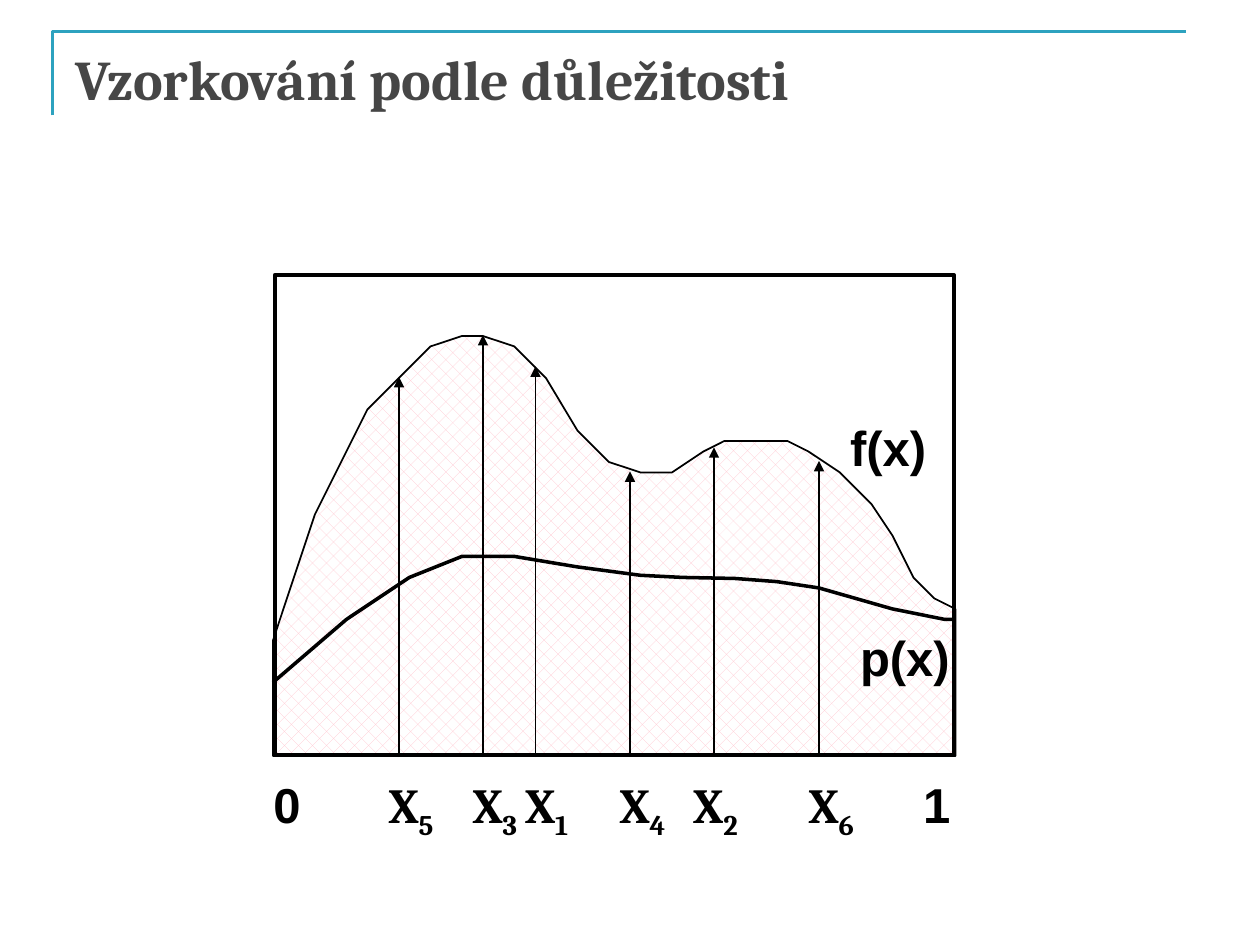
from dataclasses import dataclass
from typing import Sequence

from lxml.etree import SubElement
from pptx import Presentation
from pptx.dml.color import RGBColor as Rgb
from pptx.enum.dml import MSO_PATTERN_TYPE as Pattern
from pptx.enum.shapes import MSO_CONNECTOR as ConnectorKind, MSO_SHAPE as ShapeKind
from pptx.enum.text import MSO_ANCHOR as Anchor, MSO_AUTO_SIZE as AutoSize
from pptx.oxml.ns import qn
from pptx.shapes.autoshape import Shape
from pptx.slide import Slide
from pptx.util import Cm, Length, Pt

Points = Sequence[tuple[float, float]]


@dataclass(frozen=True)
class Theme:
    ink: Rgb = Rgb(0x00, 0x00, 0x00)
    title: Rgb = Rgb(0x46, 0x46, 0x46)
    accent: Rgb = Rgb(0x2D, 0xA2, 0xBF)
    hatch: Rgb = Rgb(0xFF, 0xC5, 0xCF)
    paper: Rgb = Rgb(0xFF, 0xFF, 0xFF)
    serif: str = "Cambria"
    sans: str = "Arial"
    title_size: Length = Pt(32)
    label_size: Length = Pt(28)
    thin: Length = Pt(1)
    medium: Length = Pt(1.5)
    thick: Length = Pt(2)


THEME = Theme()


@dataclass(frozen=True)
class Label:
    text: str
    left: float
    top: float
    width: float
    height: float = 1.43
    subscript: str = ""
    font: str = THEME.sans


@dataclass(frozen=True)
class Sample:
    index: int
    x: float
    top: float
    label_shift: float = 0.46


GRID_CM = 2.54 / 12
AXIS_Y = 72.1
LABEL_TOP = 15.49

TITLE_BRACKET = [(5, 11), (5, 3), (113, 3)]
F_CURVE = [
    (26, 61), (30, 49), (35, 39), (41, 33), (44, 32), (46, 32), (49, 33), (52, 36),
    (55, 41), (58, 44), (61, 45), (64, 45), (67, 43), (69, 42), (72, 42), (75, 42),
    (77, 43), (80, 45), (83, 48), (85, 51), (87, 55), (89, 57), (91, 58),
]
F_BASE = [(91, 72), (26, 72)]
P_CURVE = [
    (26, 65), (33, 59), (39, 55), (44, 53), (49, 53), (55, 54), (61, 54.8),
    (65, 55), (70, 55.1), (74, 55.4), (78, 56), (85, 58), (90, 59), (91, 59),
]
SAMPLES = [
    Sample(1, 51, 34.9),
    Sample(2, 68, 42.6, 0.67),
    Sample(3, 46, 31.9),
    Sample(4, 60, 44.9),
    Sample(5, 38, 35.9),
    Sample(6, 78, 43.9),
]
LABELS = [
    Label("f(x)", 16.89, 8.29, 2.15),
    Label("p(x)", 17.09, 12.52, 2.4),
    Label("0", 5.26, LABEL_TOP, 1.04),
    Label("1", 18.36, LABEL_TOP, 1.04),
]


def grid(steps: float) -> Length:
    """Turn twelfths of an inch into a length."""
    return Cm(steps * GRID_CM)


def draw_outline(page: Slide, points: Points, color: Rgb, width: Length, closed: bool = False) -> Shape:
    """Draw an unfilled polyline through grid points."""
    start, *rest = [(grid(x), grid(y)) for x, y in points]
    builder = page.shapes.build_freeform(*start)
    builder.add_line_segments(rest, close=closed)
    outline = builder.convert_to_shape()
    outline.shadow.inherit = False
    outline.fill.background()
    outline.line.color.rgb = color
    outline.line.width = width
    return outline


def draw_area(page: Slide) -> None:
    """Draw the hatched area under f(x)."""
    area = draw_outline(page, F_CURVE + F_BASE, THEME.ink, THEME.thin, closed=True)
    area.fill.patterned()
    area.fill.pattern = Pattern.PERCENT_25
    area.fill.fore_color.rgb = THEME.hatch
    area.fill.back_color.rgb = THEME.paper


def draw_frame(page: Slide) -> None:
    """Draw the border of the plot."""
    frame = page.shapes.add_shape(ShapeKind.RECTANGLE, Cm(5.54), Cm(5.54), Cm(13.69), Cm(9.68))
    frame.shadow.inherit = False
    frame.fill.background()
    frame.line.color.rgb = THEME.ink
    frame.line.width = THEME.thick


def draw_arrow(page: Slide, sample: Sample) -> None:
    """Draw an arrow from the axis up to f(x)."""
    x = grid(sample.x)
    arrow = page.shapes.add_connector(ConnectorKind.STRAIGHT, x, grid(AXIS_Y), x, grid(sample.top))
    arrow.line.color.rgb = THEME.ink
    arrow.line.width = THEME.thin
    SubElement(arrow.line._get_or_add_ln(), qn("a:tailEnd"), type="triangle")
    SubElement(arrow._element.spPr, qn("a:effectLst"))


def draw_label(page: Slide, label: Label, size: Length, color: Rgb, wrap: bool = False) -> None:
    """Write a bold text with an optional subscript."""
    box = page.shapes.add_textbox(Cm(label.left), Cm(label.top), Cm(label.width), Cm(label.height))
    frame = box.text_frame
    frame.word_wrap = wrap
    frame.auto_size = AutoSize.NONE if wrap else AutoSize.SHAPE_TO_FIT_TEXT
    frame.vertical_anchor = Anchor.TOP
    para = frame.paragraphs[0]
    for text, baseline in ((label.text, "0"), (label.subscript, "-25000")):
        if text:
            span = para.add_run()
            span.text = text
            span.font.name = label.font
            span.font.size = size
            span.font.bold = True
            span.font.color.rgb = color
            span._r.get_or_add_rPr().set("baseline", baseline)


def sample_label(sample: Sample) -> Label:
    """Place the name of a sample below its arrow."""
    left = sample.x * GRID_CM - sample.label_shift
    return Label("X", left, LABEL_TOP, 1.75, 1.45, str(sample.index), THEME.serif)


def main() -> None:
    """Build the slide and save it."""
    deck = Presentation()
    deck.slide_width, deck.slide_height = Cm(25.4), Cm(19.05)
    page = deck.slides.add_slide(deck.slide_layouts[6])

    draw_outline(page, TITLE_BRACKET, THEME.accent, THEME.medium)
    title = Label("Vzorkování podle důležitosti", 1.27, 0.78, 22.86, 3.18, font=THEME.serif)
    draw_label(page, title, THEME.title_size, THEME.title, wrap=True)

    draw_area(page)
    draw_frame(page)
    draw_outline(page, P_CURVE, THEME.ink, THEME.thick)
    for sample in SAMPLES:
        draw_arrow(page, sample)
    for label in LABELS + [sample_label(sample) for sample in SAMPLES]:
        draw_label(page, label, THEME.label_size, THEME.ink)

    deck.save("out.pptx")


if __name__ == "__main__":
    main()
